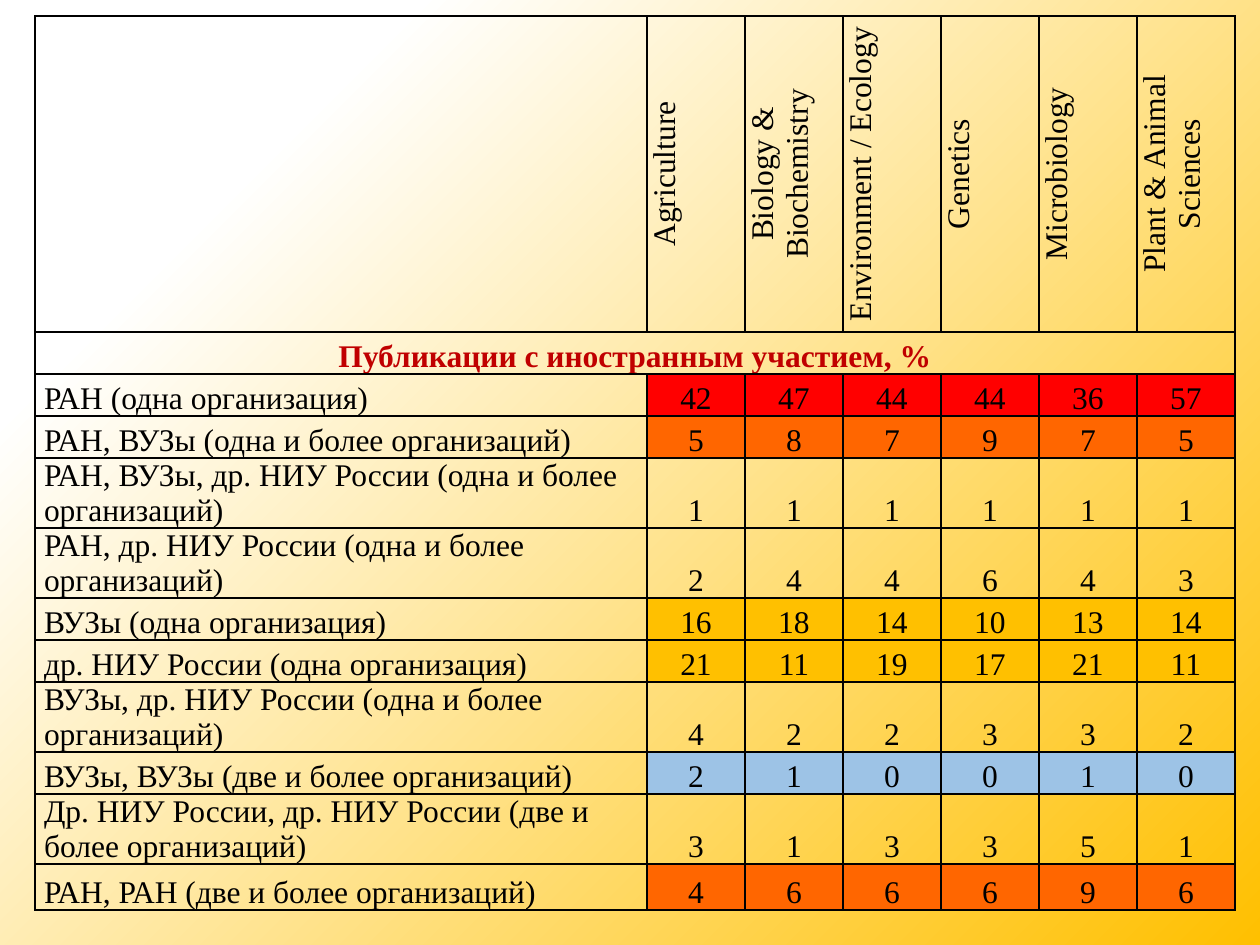
from pptx import Presentation
from pptx import util as u
from pptx.dml.color import RGBColor
from pptx.enum import text
from pptx.oxml import parse_xml
from pptx.oxml.ns import nsdecls

PX = 914400 / 126
FONT = "Times New Roman"
COLORS = {
    "black": "000000",
    "white": "FFFFFF",
    "caption": "C00000",
    "red": "FF0000",
    "orange": "FF6600",
    "amber": "FFC000",
    "blue": "9DC3E6",
}
FIELDS = ["Agriculture", "Biology & Biochemistry", "Environment / Ecology",
          "Genetics", "Microbiology", "Plant & Animal Sciences"]
CAPTION = "Публикации с иностранным участием, %"
# Label, row height in px, fill of the values, values by field
SHARES = [
    ("РАН (одна организация)", 42, "red", [42, 47, 44, 44, 36, 57]),
    ("РАН, ВУЗы (одна и более организаций)", 42, "orange", [5, 8, 7, 9, 7, 5]),
    ("РАН, ВУЗы, др. НИУ России (одна и более организаций)", 70, None, [1, 1, 1, 1, 1, 1]),
    ("РАН, др. НИУ России (одна и более организаций)", 70, None, [2, 4, 4, 6, 4, 3]),
    ("ВУЗы (одна организация)", 42, "amber", [16, 18, 14, 10, 13, 14]),
    ("др. НИУ России (одна организация)", 42, "amber", [21, 11, 19, 17, 21, 11]),
    ("ВУЗы, др. НИУ России (одна и более организаций)", 70, None, [4, 2, 2, 3, 3, 2]),
    ("ВУЗы, ВУЗы (две и более организаций)", 42, "blue", [2, 1, 0, 0, 1, 0]),
    ("Др. НИУ России, др. НИУ России (две и более организаций)", 70, None, [3, 1, 3, 3, 5, 1]),
    ("РАН, РАН (две и более организаций)", 46, "orange", [4, 6, 6, 6, 9, 6]),
]
HEADER_HEIGHT, CAPTION_HEIGHT = 316, 42
LABEL_WIDTH, FIELD_WIDTH = 612, 98


def px(length):
    return u.Emu(round(length * PX))


def set_background(page):
    """Fill the page with a gradient that spreads from the top left corner."""
    stops = "".join(
        f'<a:gs pos="{position * 1000}"><a:srgbClr val="{COLORS[color]}"/></a:gs>'
        for position, color in [(0, "white"), (19, "white"), (100, "amber")])
    page._element.cSld.insert(0, parse_xml(
        f'<p:bg {nsdecls("p", "a")}><p:bgPr><a:gradFill rotWithShape="1">'
        f'<a:gsLst>{stops}</a:gsLst><a:path path="circle">'
        '<a:fillToRect r="100000" b="100000"/></a:path></a:gradFill>'
        '<a:effectLst/></p:bgPr></p:bg>'))


def set_borders(cell):
    properties = cell._tc.get_or_add_tcPr()
    for side in "LRTB":
        properties.append(parse_xml(
            f'<a:ln{side} {nsdecls("a")} w="12700"><a:solidFill>'
            f'<a:srgbClr val="{COLORS["black"]}"/></a:solidFill></a:ln{side}>'))


def style_cell(cell, fill=None):
    set_borders(cell)
    if fill:
        cell.fill.solid()
        cell.fill.fore_color.rgb = RGBColor.from_string(COLORS[fill])
    else:
        cell.fill.background()
    cell.margin_left = cell.margin_right = px(9)
    cell.margin_top = cell.margin_bottom = 0
    cell.vertical_anchor = text.MSO_ANCHOR.BOTTOM


def write_cell(cell, words, align=text.PP_ALIGN.CENTER, color="black", bold=False):
    para = cell.text_frame.paragraphs[0]
    para.text = words
    para.alignment = align
    for span in para.runs:
        span.font.name = FONT
        span.font.size = u.Pt(18)
        span.font.bold = bold
        span.font.color.rgb = RGBColor.from_string(COLORS[color])


def add_grid(page):
    """Add the empty table with its column widths and row heights."""
    heights = [HEADER_HEIGHT, CAPTION_HEIGHT] + [share[1] for share in SHARES]
    widths = [LABEL_WIDTH] + [FIELD_WIDTH] * len(FIELDS)
    table = page.shapes.add_table(len(heights), len(widths), px(35), px(16),
                                  px(sum(widths)), px(sum(heights))).table
    table.first_row = table.horz_banding = False
    for column, width in zip(table.columns, widths):
        column.width = px(width)
    for row, height in zip(table.rows, heights):
        row.height = px(height)
    return table


def fill_header(table):
    for cell in table.rows[0].cells:
        style_cell(cell)
    for column, field in enumerate(FIELDS, 1):
        cell = table.cell(0, column)
        write_cell(cell, field)
        cell.vertical_anchor = text.MSO_ANCHOR.MIDDLE
        cell._tc.tcPr.set("vert", "vert270")


def fill_caption(table):
    for cell in table.rows[1].cells:
        style_cell(cell)
    caption = table.cell(1, 0)
    caption.merge(table.cell(1, len(FIELDS)))
    write_cell(caption, CAPTION, color="caption", bold=True)
    caption.text_frame.paragraphs[0].line_spacing = 1.15


def fill_shares(table):
    for row, (label, _, fill, values) in enumerate(SHARES, 2):
        style_cell(table.cell(row, 0))
        write_cell(table.cell(row, 0), label, text.PP_ALIGN.LEFT)
        for column, value in enumerate(values, 1):
            style_cell(table.cell(row, column), fill)
            write_cell(table.cell(row, column), str(value))


def main():
    deck = Presentation()
    deck.slide_width, deck.slide_height = px(1260), px(945)
    page = deck.slides.add_slide(deck.slide_layouts[6])
    set_background(page)
    table = add_grid(page)
    fill_header(table)
    fill_caption(table)
    fill_shares(table)
    deck.save("out.pptx")


if __name__ == "__main__":
    main()
